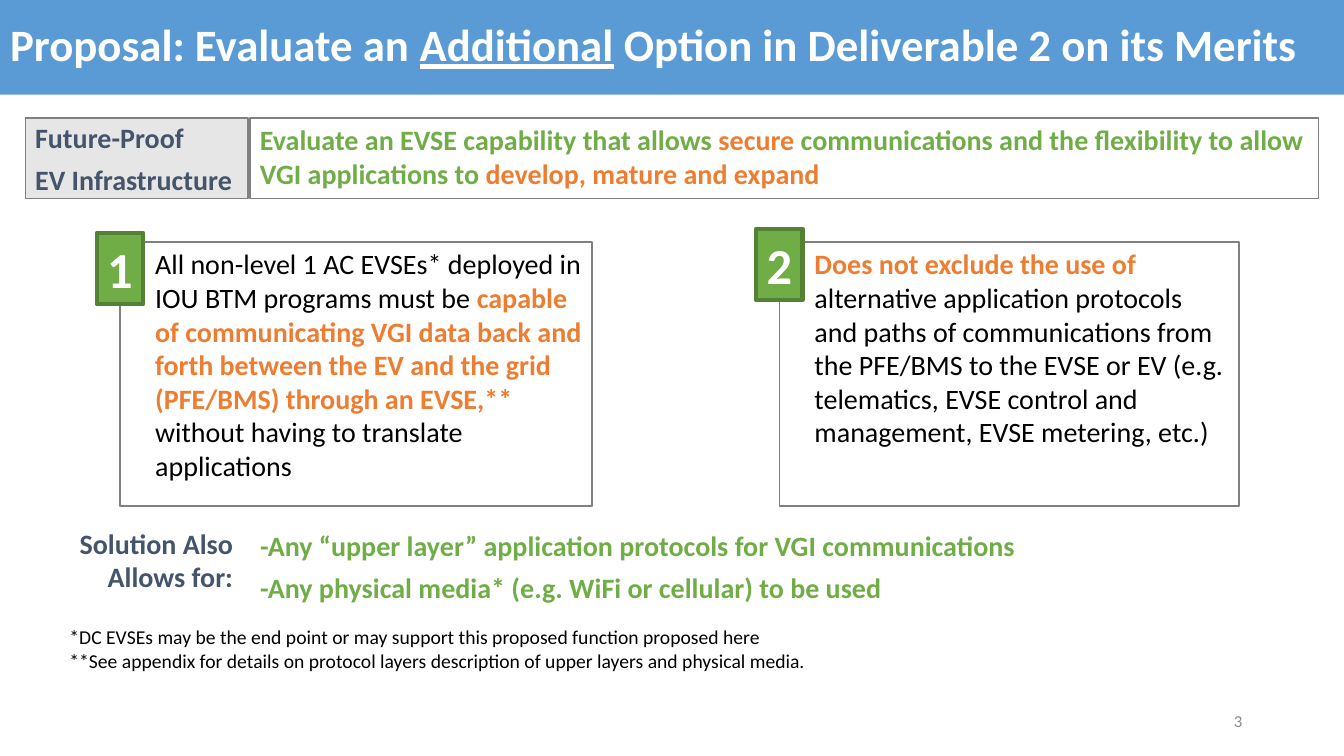
from dataclasses import dataclass

from pptx import Presentation
from pptx.dml.color import RGBColor
from pptx.enum.shapes import MSO_SHAPE
from pptx.enum.text import MSO_ANCHOR, MSO_AUTO_SIZE, PP_ALIGN
from pptx.util import Inches, Pt
from lxml.etree import SubElement
from pptx.oxml.ns import qn


@dataclass(frozen=True)
class Theme:
    """Hold the colours and type sizes of the slide."""
    font: str = "Calibri"
    banner: str = "5B9BD5"
    white: str = "FFFFFF"
    black: str = "000000"
    slate: str = "44546A"
    panel: str = "E7E6E6"
    outline: str = "808080"
    green: str = "70AD47"
    dark_green: str = "548235"
    orange: str = "ED7D31"
    muted: str = "8C8C8C"
    title_size: int = 32
    badge_size: int = 36
    text_size: int = 20
    note_size: int = 14
    number_size: int = 12


THEME = Theme()
GREEN = {"color": THEME.green}
ORANGE = {"color": THEME.orange}
ORANGE_BOLD = {"color": THEME.orange, "bold": True}


def place(shape, box):
    """Move a shape to a left, top, width, height box in inches."""
    shape.left, shape.top, shape.width, shape.height = map(Inches, box)


def write_text(shape, paragraphs, size=THEME.text_size, color=THEME.black, bold=False,
               align=PP_ALIGN.LEFT, anchor=MSO_ANCHOR.TOP, after=0, spacing=1.0,
               indent=0, wrap=True, auto_size=MSO_AUTO_SIZE.NONE):
    """Fill a shape with paragraphs, each a list of (text, format changes) runs."""
    frame = shape.text_frame
    frame.auto_size, frame.word_wrap, frame.vertical_anchor = auto_size, wrap, anchor
    for index, runs in enumerate(paragraphs):
        paragraph = frame.add_paragraph() if index else frame.paragraphs[0]
        paragraph.alignment, paragraph.line_spacing = align, spacing
        paragraph.space_before, paragraph.space_after = Pt(0), Pt(after)
        properties = paragraph._p.get_or_add_pPr()
        properties.set("marL", str(Inches(indent)))
        properties.set("indent", "0")
        SubElement(properties, qn("a:buNone"))
        for text, changes in runs:
            run = paragraph.add_run()
            run.text = text
            font = run.font
            font.name, font.size = THEME.font, Pt(size)
            font.bold = changes.get("bold", bold)
            font.underline = changes.get("underline", False)
            font.color.rgb = RGBColor.from_string(changes.get("color", color))


def add_panel(slide, box, fill=None, line=THEME.outline, line_width=1):
    """Add an outlined rectangle and return it."""
    shape = slide.shapes.add_shape(MSO_SHAPE.RECTANGLE, *map(Inches, box))
    shape.shadow.inherit = False
    if fill:
        shape.fill.solid()
        shape.fill.fore_color.rgb = RGBColor.from_string(fill)
    else:
        shape.fill.background()
    shape.line.color.rgb = RGBColor.from_string(line)
    shape.line.width = Pt(line_width)
    return shape


def add_label(slide, box, paragraphs, **text_format):
    """Add a plain text box."""
    write_text(slide.shapes.add_textbox(*map(Inches, box)), paragraphs, **text_format)


def build_title(slide, box):
    """Turn the title placeholder into the banner."""
    title = slide.shapes.title
    place(title, box)
    title.fill.solid()
    title.fill.fore_color.rgb = RGBColor.from_string(THEME.banner)
    runs = [("Proposal: Evaluate an ", {}), ("Additional", {"underline": True}),
            (" Option in Deliverable 2 on its Merits", {})]
    write_text(title, [runs], size=THEME.title_size, color=THEME.white, bold=True,
               anchor=MSO_ANCHOR.MIDDLE, spacing=0.9)


def build_goal(slide, box):
    """Place the goal label and its statement side by side."""
    left, top, width, height = box
    label_width, gap = 2.21, 0.02
    label = add_panel(slide, (left, top, label_width, height), fill=THEME.panel)
    write_text(label, [[("Future-Proof", {})], [("EV Infrastructure", {})]],
               color=THEME.slate, bold=True, anchor=MSO_ANCHOR.MIDDLE, after=6)
    offset = label_width + gap
    statement = add_panel(slide, (left + offset, top, width - offset, height))
    runs = [("Evaluate an EVSE capability that allows ", GREEN), ("secure ", ORANGE),
            ("communications and the flexibility to allow VGI applications to ", GREEN),
            ("develop, mature and expand", ORANGE)]
    write_text(statement, [runs], bold=True, after=6)


def build_option(slide, box, number, rise, runs):
    """Place an option panel with a numbered badge over its top left corner."""
    left, top = box[:2]
    badge_width, badge_height = 0.46, 0.71
    write_text(add_panel(slide, box), [runs], indent=0.25)
    badge_box = (left - badge_width / 2, top - rise, badge_width, badge_height)
    badge = add_panel(slide, badge_box, fill=THEME.green, line=THEME.dark_green, line_width=3)
    write_text(badge, [[(number, {})]], size=THEME.badge_size, color=THEME.white, bold=True,
               align=PP_ALIGN.CENTER, after=6, wrap=False,
               auto_size=MSO_AUTO_SIZE.SHAPE_TO_FIT_TEXT)


def build_allowances(slide, box):
    """Place the allowance label and the list in the body placeholder."""
    left, top, width, height = box
    label_width, list_offset, drop = 2.08, 2.15, 0.08
    add_label(slide, (left, top, label_width, height), [[("Solution Also Allows for:", {})]],
              color=THEME.slate, bold=True, align=PP_ALIGN.RIGHT,
              anchor=MSO_ANCHOR.MIDDLE, after=6)
    body = slide.placeholders[1]
    place(body, (left + list_offset, top + drop, width - list_offset, height - drop))
    items = ["-Any “upper layer” application protocols for VGI communications",
             "-Any physical media* (e.g. WiFi or cellular) to be used"]
    write_text(body, [[(item, {})] for item in items], color=THEME.green, bold=True, after=6)


def build_notes(slide, box):
    """Place the footnotes."""
    notes = ["*DC EVSEs may be the end point or may support this proposed function proposed here",
             "**See appendix for details on protocol layers description of upper layers "
             "and physical media."]
    add_label(slide, box, [[(note, {})] for note in notes], size=THEME.note_size,
              wrap=False, auto_size=MSO_AUTO_SIZE.SHAPE_TO_FIT_TEXT)


def build_page_number(slide, box):
    """Place the page number."""
    add_label(slide, box, [[("3", {})]], size=THEME.number_size, color=THEME.muted,
              align=PP_ALIGN.RIGHT, anchor=MSO_ANCHOR.MIDDLE)


def main():
    """Build the slide and save it."""
    presentation = Presentation()
    presentation.slide_width, presentation.slide_height = Inches(13.33), Inches(7.5)
    slide = presentation.slides.add_slide(presentation.slide_layouts[1])
    build_title(slide, (0, 0, 13.33, 0.94))
    build_page_number(slide, (9.42, 6.95, 3, 0.4))
    build_goal(slide, (0.25, 1.17, 12.83, 0.8))
    build_option(slide, (1.19, 2.4, 4.68, 2.62), "1", 0.09, [
        ("All non-level 1 AC EVSEs* deployed in IOU BTM programs must be ", {}),
        ("capable of communicating VGI data back and forth between the EV and the grid "
         "(PFE/BMS) through an EVSE,** ", ORANGE_BOLD),
        ("without having to translate applications", {})])
    build_option(slide, (7.73, 2.4, 4.56, 2.62), "2", 0.13, [
        ("Does not exclude the use of ", ORANGE_BOLD),
        ("alternative application protocols and paths of communications from the PFE/BMS "
         "to the EVSE or EV (e.g. telematics, EVSE control and management, "
         "EVSE metering, etc.)", {})])
    build_allowances(slide, (0.33, 5.11, 12.64, 0.89))
    build_notes(slide, (0.59, 6.15, 7.57, 0.81))
    presentation.save("out.pptx")


if __name__ == "__main__":
    main()
